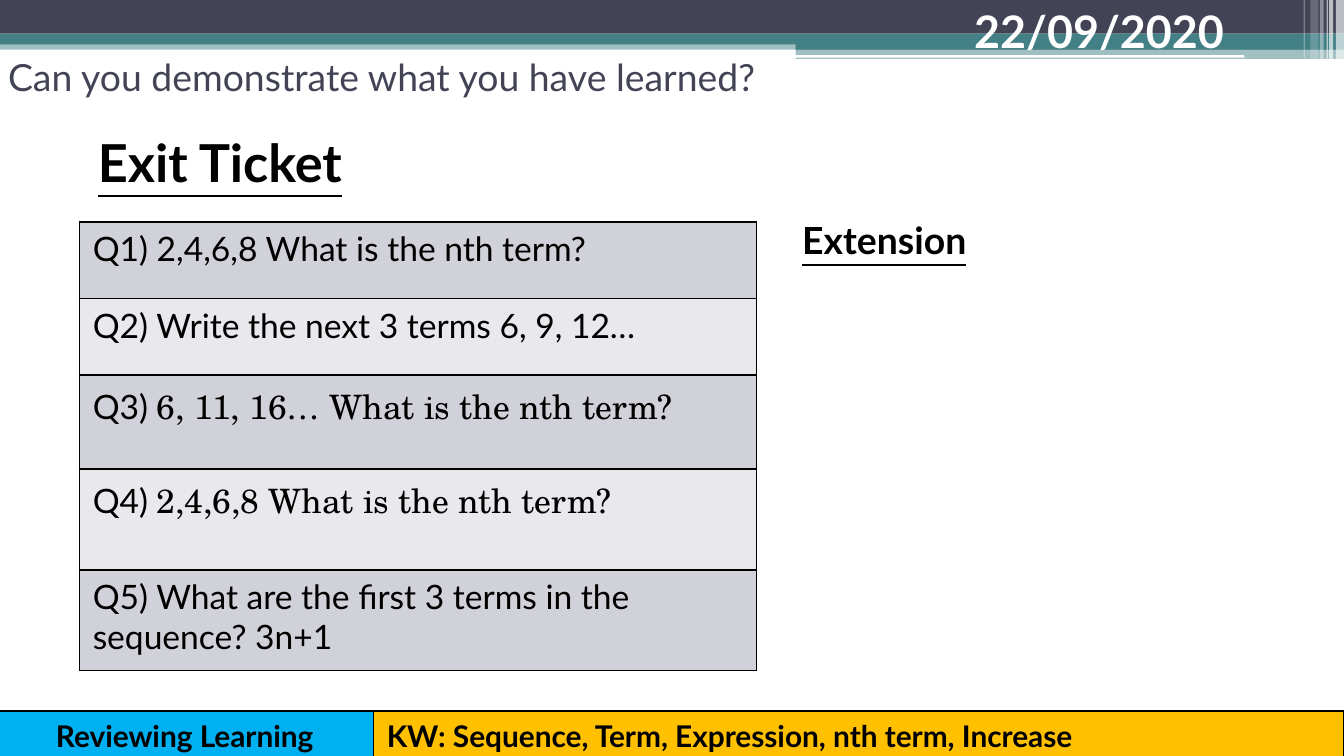
from typing import NamedTuple, Optional

from lxml.etree import SubElement
from pptx import Presentation
from pptx.dml.color import RGBColor
from pptx.enum.shapes import MSO_SHAPE
from pptx.enum.text import MSO_ANCHOR, MSO_AUTO_SIZE, PP_ALIGN
from pptx.oxml.ns import qn
from pptx.util import Inches, Pt

COLORS = {
    "navy": "424456", "teal": "438086", "white": "FFFFFF", "black": "000000",
    "blue": "00B0F0", "amber": "FFC000", "odd": "D1D1DA", "even": "E9E9ED",
}
SANS, SERIF = "Lato", "TeX Gyre Schola"


class Box(NamedTuple):
    left: float
    top: float
    width: float
    height: float


class Bar(NamedTuple):
    box: Box
    color: str
    alpha: int = 100


class Label(NamedTuple):
    text: str
    box: Box
    size: int
    color: str = "black"
    underline: bool = True
    indent: float = 0
    before: int = 0


class Footer(NamedTuple):
    text: str
    box: Box
    color: str
    align: PP_ALIGN


class Question(NamedTuple):
    number: str
    text: str
    height: float
    font: str = SANS


# Header bands, then the vertical stripes at the right edge
BANDS = [
    Bar(Box(0, 0.3, 10, 0.07), "teal", 50),
    Bar(Box(0, 0, 10, 0.25), "navy"),
    Bar(Box(0, 0.25, 10, 0.08), "teal"),
    Bar(Box(5.92, 0.3, 4.08, 0.07), "teal"),
    Bar(Box(5.92, 0.36, 4.08, 0.15), "teal", 50),
    Bar(Box(5.91, 0.41, 3.35, 0.02), "white"),
]
STRIPES = [
    Bar(Box(left, 0, width, height), "white", alpha)
    for left, width, height, alpha in [
        (9.94, 0.06, 0.51, 65), (9.89, 0.03, 0.51, 65), (9.87, 0.01, 0.51, 60),
        (9.82, 0.03, 0.51, 40), (9.75, 0.06, 0.48, 20), (9.7, 0.01, 0.48, 30),
    ]
]
FOOTERS = [
    Footer("Reviewing Learning", Box(-0.03, 5.29, 2.81, 0.37), "blue", PP_ALIGN.CENTER),
    Footer("KW: Sequence, Term, Expression, nth term, Increase",
           Box(2.78, 5.29, 7.22, 0.37), "amber", PP_ALIGN.LEFT),
]
DATE = Label("22/09/2020", Box(7.15, -0.02, 2.95, 0.4), 24, "white")
HEADINGS = [
    Label("Exit Ticket", Box(0.51, 0.92, 9, 4.01), 28, indent=0.12, before=3),
    Label("Extension", Box(5.87, 1.57, 3.31, 1.45), 20),
]
QUESTIONS = [
    Question("Q1) ", "2,4,6,8 What is the nth term?", 0.57),
    Question("Q2) ", "Write the next 3 terms 6, 9, 12…", 0.57),
    Question("Q3) ", "6, 11, 16… What is the nth term?", 0.7, SERIF),
    Question("Q4) ", "2,4,6,8 What is the nth term?", 0.75, SERIF),
    Question("Q5) ", "What are the first 3 terms in the sequence? 3n+1", 0.75),
]


def rgb(name: str) -> RGBColor:
    return RGBColor.from_string(COLORS[name])


def place(box: Box) -> list:
    return [Inches(v) for v in box]


def add_run(p, text: str, color: str = "black", **formats) -> None:
    r = p.add_run()
    r.text = text
    r.font.color.rgb = rgb(color)
    for name, value in ({"name": SANS} | formats).items():
        setattr(r.font, name, value)


def add_rect(s, bar: Bar, line: Optional[str] = None, weight: float = 0.75):
    sp = s.shapes.add_shape(MSO_SHAPE.RECTANGLE, *place(bar.box))
    sp.shadow.inherit = False
    sp.fill.solid()
    sp.fill.fore_color.rgb = rgb(bar.color)
    if bar.alpha < 100:
        clr = sp.fill._xPr.find(".//" + qn("a:srgbClr"))
        SubElement(clr, qn("a:alpha"), val=str(bar.alpha * 1000))
    if line:
        sp.line.color.rgb = rgb(line)
        sp.line.width = Pt(weight)
    else:
        sp.line.fill.background()
    return sp


def add_label(s, label: Label) -> None:
    tf = s.shapes.add_textbox(*place(label.box)).text_frame
    tf.word_wrap = True
    p = tf.paragraphs[0]
    p.space_before = Pt(label.before)
    p._p.get_or_add_pPr().set("marL", str(Inches(label.indent)))
    add_run(p, label.text, label.color, size=Pt(label.size), bold=True,
            underline=label.underline)


def add_footer(s, footer: Footer) -> None:
    tf = add_rect(s, Bar(footer.box, footer.color), "black").text_frame
    tf.word_wrap = True
    p = tf.paragraphs[0]
    p.alignment = footer.align
    add_run(p, footer.text, size=Pt(16), bold=True)


def add_borders(cell) -> None:
    tcPr = cell._tc.get_or_add_tcPr()
    for i, side in enumerate(("lnL", "lnR", "lnT", "lnB")):
        ln = tcPr.makeelement(qn(f"a:{side}"), {"w": str(Pt(1))})
        SubElement(SubElement(ln, qn("a:solidFill")), qn("a:srgbClr"), val=COLORS["black"])
        tcPr.insert(i, ln)


def add_questions(s, questions: list[Question]) -> None:
    box = Box(0.59, 1.65, 5.04, sum(q.height for q in questions))
    table = s.shapes.add_table(len(questions), 1, *place(box)).table
    for i, q in enumerate(questions):
        table.rows[i].height = Inches(q.height)
        cell = table.cell(i, 0)
        cell.fill.solid()
        cell.fill.fore_color.rgb = rgb("even" if i % 2 else "odd")
        add_borders(cell)
        p = cell.text_frame.paragraphs[0]
        add_run(p, q.number, size=Pt(18), bold=False)
        add_run(p, q.text, size=Pt(18), bold=False, name=q.font)


def add_title(s, text: str) -> None:
    sp = s.shapes.title
    sp.left, sp.top, sp.width, sp.height = place(Box(-0.04, 0.13, 9, 0.88))
    tf = sp.text_frame
    formats = {"word_wrap": True, "auto_size": MSO_AUTO_SIZE.NONE,
               "vertical_anchor": MSO_ANCHOR.MIDDLE}
    for name, value in formats.items():
        setattr(tf, name, value)
    p = tf.paragraphs[0]
    p.alignment = PP_ALIGN.LEFT
    add_run(p, text, "navy", size=Pt(20))


def main() -> None:
    prs = Presentation()
    prs.slide_width = Inches(10)
    prs.slide_height = prs.slide_width * 9 // 16
    s = prs.slides.add_slide(prs.slide_layouts[5])

    # Header
    for bar in BANDS + STRIPES:
        add_rect(s, bar)
    add_title(s, "Can you demonstrate what you have learned?")
    add_label(s, DATE)

    # Footer bars and the white strip that trims the header
    for footer in FOOTERS:
        add_footer(s, footer)
    add_rect(s, Bar(Box(5.87, 0.45, 4.13, 0.31), "white"), "white", 1.5)

    # Headings and questions
    for heading in HEADINGS:
        add_label(s, heading)
    add_questions(s, QUESTIONS)

    prs.save("out.pptx")


if __name__ == "__main__":
    main()
